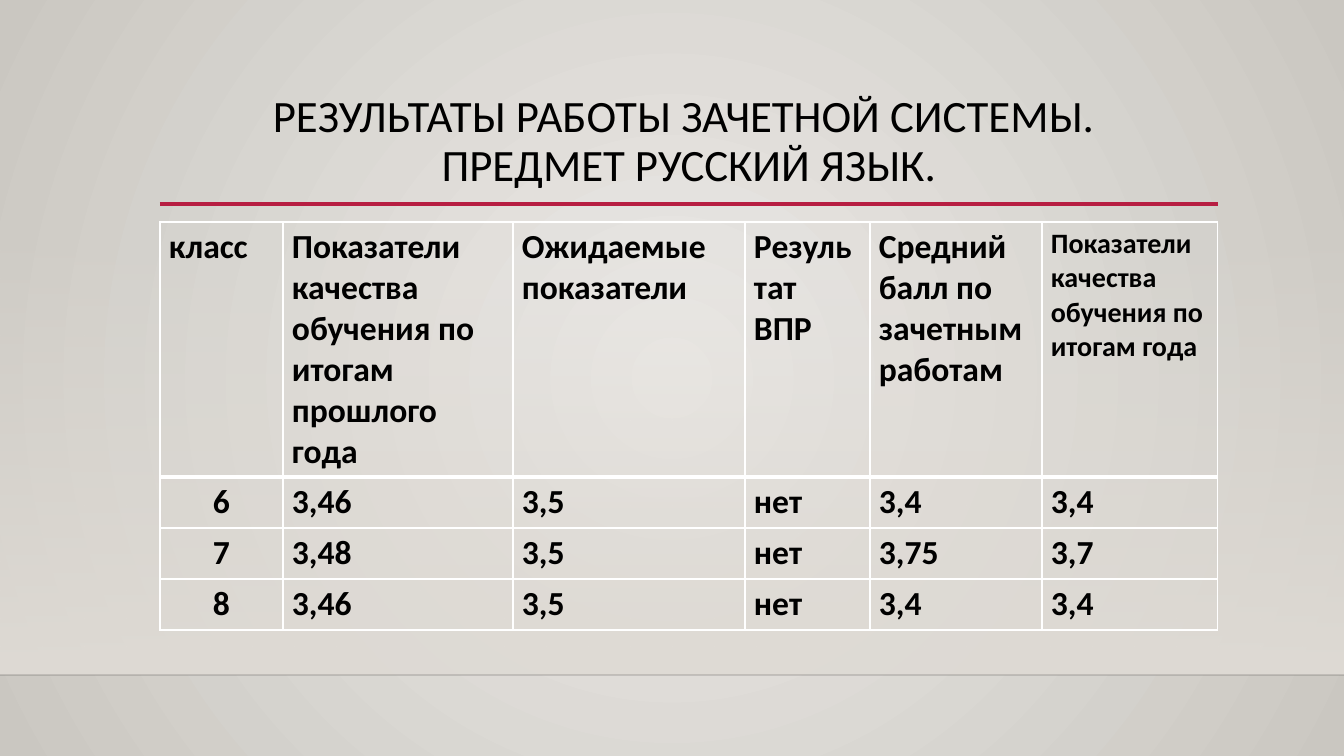
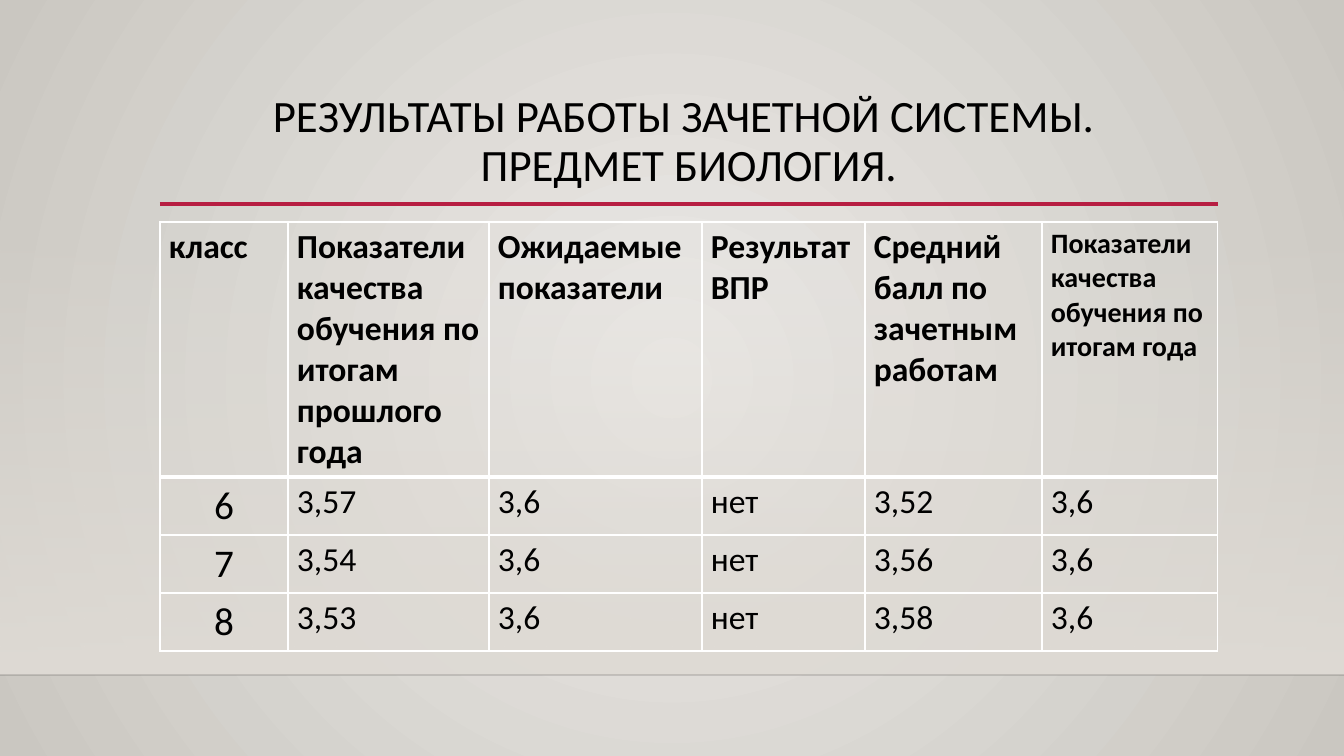
import pptx
import pptx.dml.color
import pptx.enum.shapes
import pptx.enum.text
import pptx.oxml
import pptx.oxml.ns
import pptx.util

EMU_PER_PX = 914400 / 100.8
SLIDE_W, SLIDE_H = 1344, 756
FLOOR_Y = 675
FONT = "Calibri"
COLORS = {
    "glow": "ECEAE7",
    "edge": "CAC7C1",
    "wall": "DFDBD5",
    "accent": "B71E42",
    "text": "000000",
    "grid": "FFFFFF",
}
TITLE_BOX = (160, 89, 1058, 116)
TABLE_POS = (160, 222)
HEADER_H = 255
HEADERS = [
    "класс",
    "Показатели качества обучения по итогам прошлого года",
    "Ожидаемые показатели",
    "Результат ВПР",
    "Средний балл по зачетным работам",
    "Показатели качества обучения по итогам года",
]
HEADER_SIZES = [24, 24, 24, 24, 24, 20]
SUBJECTS = [
    {
        "title": "ПРЕДМЕТ РУССКИЙ ЯЗЫК.",
        "cols": [123, 230, 232, 125, 172, 176],
        "row_h": 51,
        "sizes": [24] * 6,
        "bold": True,
        "rows": [
            ["6", "3,46", "3,5", "нет", "3,4", "3,4"],
            ["7", "3,48", "3,5", "нет", "3,75", "3,7"],
            ["8", "3,46", "3,5", "нет", "3,4", "3,4"],
        ],
    },
    {
        "title": "ПРЕДМЕТ БИОЛОГИЯ.",
        "cols": [128, 201, 213, 163, 177, 176],
        "row_h": 58,
        "sizes": [28] + [24] * 5,
        "bold": False,
        "rows": [
            ["6", "3,57", "3,6", "нет", "3,52", "3,6"],
            ["7", "3,54", "3,6", "нет", "3,56", "3,6"],
            ["8", "3,53", "3,6", "нет", "3,58", "3,6"],
        ],
    },
]


def px(n):
    return pptx.util.Emu(round(n * EMU_PER_PX))


def rgb(name):
    return pptx.dml.color.RGBColor.from_string(COLORS[name])


def xml(tag, body="", attrs=""):
    ns = pptx.oxml.ns.nsdecls("a")
    return pptx.oxml.parse_xml(f"<a:{tag} {ns} {attrs}>{body}</a:{tag}>")


def set_gradient(fill, parent, stops, direction):
    fill.gradient()
    old = parent.xpath(".//a:gradFill")[0]
    gs = "".join(
        f'<a:gs pos="{pos}"><a:srgbClr val="{COLORS[name]}">'
        f'<a:alpha val="{alpha}"/></a:srgbClr></a:gs>'
        for pos, name, alpha in stops
    )
    new = xml("gradFill", f"<a:gsLst>{gs}</a:gsLst>{direction}", 'rotWithShape="1"')
    old.getparent().replace(old, new)


def set_background(master):
    center = '<a:fillToRect l="50000" t="50000" r="50000" b="50000"/>'
    set_gradient(
        master.background.fill,
        master.element,
        [(0, "glow", 100000), (100000, "edge", 100000)],
        f'<a:path path="circle">{center}</a:path>',
    )


def add_rule(s, x1, x2, y, color, width, alpha=100):
    line = s.shapes.add_connector(
        pptx.enum.shapes.MSO_CONNECTOR.STRAIGHT, px(x1), px(y), px(x2), px(y)
    )
    line.line.color.rgb = rgb(color)
    line.line.width = pptx.util.Pt(width)
    line.element.spPr.append(xml("effectLst"))
    if alpha < 100:
        clr = line.element.xpath(".//a:ln//a:srgbClr")[0]
        clr.append(xml("alpha", attrs=f'val="{alpha * 1000}"'))


def add_backdrop(s):
    top = 223
    sp = s.shapes.add_shape(
        pptx.enum.shapes.MSO_SHAPE.RECTANGLE,
        0, px(top), px(SLIDE_W), px(FLOOR_Y - top),
    )
    sp.shadow.inherit = False
    sp.line.fill.background()
    set_gradient(
        sp.fill,
        sp.element,
        [(0, "wall", 0), (100000, "wall", 100000)],
        '<a:lin ang="5400000" scaled="0"/>',
    )
    add_rule(s, 0, SLIDE_W, FLOOR_Y, "text", 1, 20)


def style_runs(p, size, bold):
    for r in p.runs:
        r.font.name = FONT
        r.font.size = pptx.util.Pt(size)
        r.font.bold = bold
        r.font.color.rgb = rgb("text")


def add_title(s, box, subject):
    x, y, w, h = box
    tf = s.shapes.add_textbox(px(x), px(y), px(w), px(h)).text_frame
    tf.word_wrap = True
    tf.vertical_anchor = pptx.enum.text.MSO_ANCHOR.TOP
    p = tf.paragraphs[0]
    p.text = "РЕЗУЛЬТАТЫ РАБОТЫ ЗАЧЕТНОЙ СИСТЕМЫ. \v" + subject
    p.alignment = pptx.enum.text.PP_ALIGN.CENTER
    p.line_spacing = 0.9
    style_runs(p, 32, False)
    add_rule(s, x, x + w, y + h - 1, "accent", 2.5)


def set_borders(cell, top, bottom):
    tc_pr = cell._tc.get_or_add_tcPr()
    for side, width in zip("LRTB", (1, 1, top, bottom)):
        color = f'<a:solidFill><a:srgbClr val="{COLORS["grid"]}"/></a:solidFill>'
        tc_pr.append(xml("ln" + side, color, f'w="{width * 12700}"'))


def fill_cell(cell, text, size, bold, centered, top, bottom):
    set_borders(cell, top, bottom)
    cell.fill.background()
    cell.margin_left = cell.margin_right = px(9)
    cell.margin_top = cell.margin_bottom = px(5)
    p = cell.text_frame.paragraphs[0]
    p.text = text
    if centered:
        p.alignment = pptx.enum.text.PP_ALIGN.CENTER
    style_runs(p, size, bold)


def add_results(s, pos, subject):
    rows = [HEADERS] + subject["rows"]
    heights = [HEADER_H] + [subject["row_h"]] * len(subject["rows"])
    cols = subject["cols"]
    table = s.shapes.add_table(
        len(rows), len(cols), px(pos[0]), px(pos[1]), px(sum(cols)), px(sum(heights))
    ).table
    table.first_row = table.horz_banding = False
    for col, width in zip(table.columns, cols):
        col.width = px(width)
    for i, (row, height) in enumerate(zip(rows, heights)):
        table.rows[i].height = px(height)
        sizes = subject["sizes"] if i else HEADER_SIZES
        for j, text in enumerate(row):
            fill_cell(
                table.cell(i, j), text, sizes[j],
                bold=subject["bold"] or i == 0,
                centered=i > 0 and j == 0,
                top=3 if i == 1 else 1,
                bottom=3 if i == 0 else 1,
            )


def add_subject_slide(prs, subject):
    s = prs.slides.add_slide(prs.slide_layouts[6])
    add_backdrop(s)
    add_title(s, TITLE_BOX, subject["title"])
    add_results(s, TABLE_POS, subject)


def main():
    prs = pptx.Presentation()
    prs.slide_width, prs.slide_height = px(SLIDE_W), px(SLIDE_H)
    set_background(prs.slide_master)
    for subject in SUBJECTS:
        add_subject_slide(prs, subject)
    prs.save("out.pptx")


if __name__ == "__main__":
    main()
